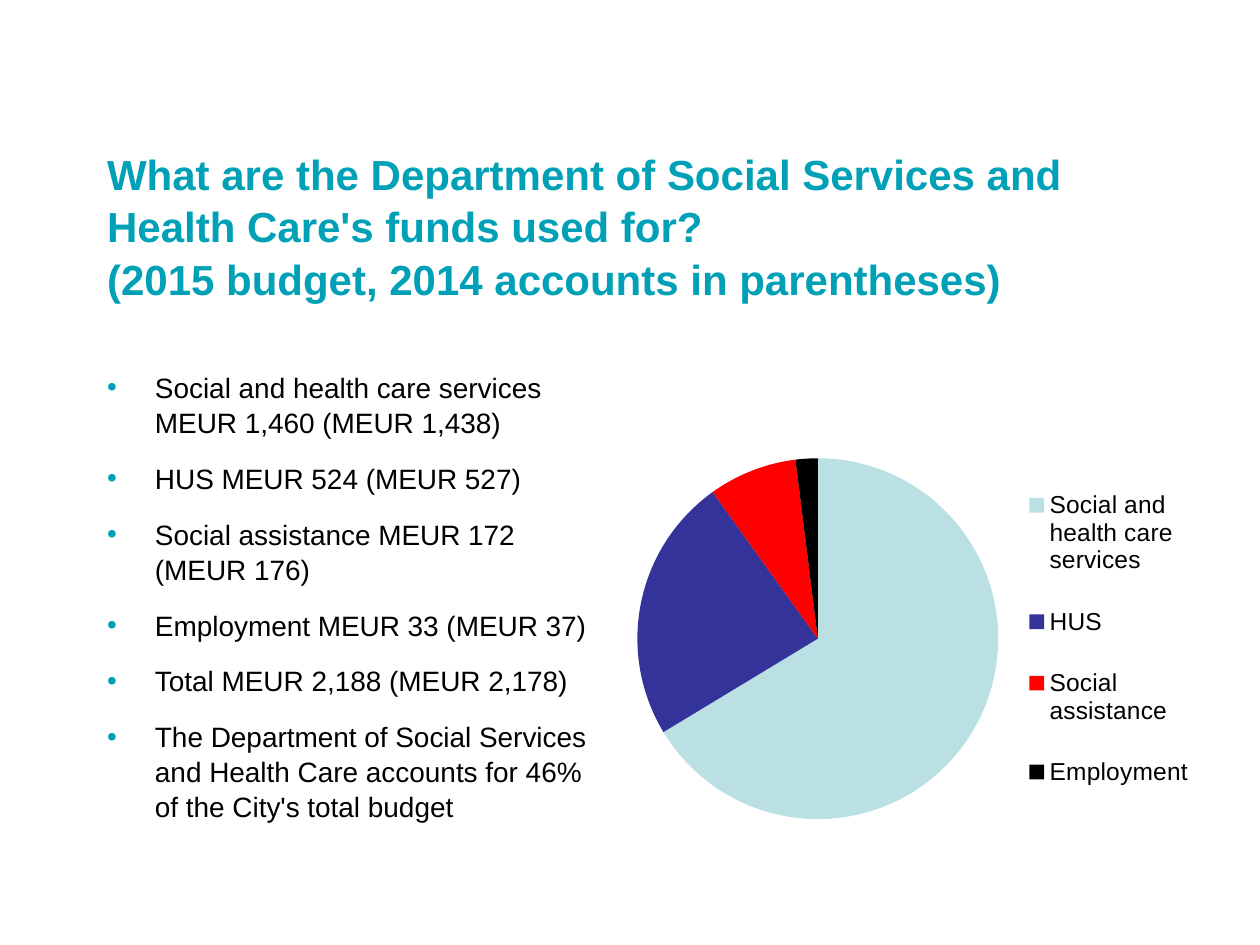
from dataclasses import dataclass

from lxml.etree import SubElement
from pptx import Presentation
from pptx.chart.data import CategoryChartData
from pptx.dml.color import RGBColor
from pptx.enum.chart import XL_CHART_TYPE as ChartType, XL_LEGEND_POSITION as LegendPos
from pptx.enum.text import MSO_ANCHOR as Anchor, MSO_AUTO_SIZE as AutoSize, PP_ALIGN as Align
from pptx.oxml import parse_xml
from pptx.oxml.ns import nsdecls, qn
from pptx.util import Inches, Pt


@dataclass(frozen=True)
class Theme:
    font: str = "Arial"
    accent: str = "00A0B6"
    text: str = "000000"
    title_size: int = 24
    body_size: int = 16
    legend_size: int = 14
    line_spacing: float = 1.04


@dataclass(frozen=True)
class Box:
    left: float
    top: float
    width: float
    height: float


@dataclass(frozen=True)
class Share:
    category: str
    percent: int
    color: str


THEME = Theme()
TITLE = ("What are the Department of Social Services and Health Care's funds used for?"
         "\v(2015 budget, 2014 accounts in parentheses)")
POINTS = [
    "Social and health care services MEUR 1,460 (MEUR 1,438)",
    "HUS MEUR 524 (MEUR 527)",
    "Social assistance MEUR 172 (MEUR 176)",
    "Employment MEUR 33 (MEUR 37)",
    "Total MEUR 2,188 (MEUR 2,178)",
    "The Department of Social Services and Health Care accounts for 46% of the City's total budget",
]
SHARES = [
    Share("Social and health care services", 67, "BBE0E3"),
    Share("HUS", 24, "333399"),
    Share("Social assistance", 8, "FF0000"),
    Share("Employment", 2, "000000"),
]


def style_font(font, size: int, color: str, bold: bool = False) -> None:
    font.name = THEME.font
    font.size = Pt(size)
    font.bold = bold
    font.color.rgb = RGBColor.from_string(color)


def place(placeholder, box: Box, anchor: Anchor) -> None:
    placeholder.left, placeholder.top = Inches(box.left), Inches(box.top)
    placeholder.width, placeholder.height = Inches(box.width), Inches(box.height)
    frame = placeholder.text_frame
    frame.word_wrap = True
    frame.auto_size = AutoSize.NONE
    frame.vertical_anchor = anchor


def add_bullet(paragraph, indent: float) -> None:
    properties = paragraph._p.get_or_add_pPr()
    properties.set("marL", str(Inches(indent)))
    properties.set("indent", str(-Inches(indent)))
    color = SubElement(properties, qn("a:buClr"))
    SubElement(color, qn("a:srgbClr")).set("val", THEME.accent)
    SubElement(properties, qn("a:buFont")).set("typeface", THEME.font)
    SubElement(properties, qn("a:buChar")).set("char", "•")


def set_layout(element, index: int, area: Box, inner: bool = False) -> None:
    """Fix a chart part at fractions of the chart's size."""
    for old in element.findall(qn("c:layout")):
        element.remove(old)
    target = '<c:layoutTarget val="inner"/>' if inner else ""
    values = (("xMode", "edge"), ("yMode", "edge"), ("x", area.left), ("y", area.top),
              ("w", area.width), ("h", area.height))
    parts = "".join(f'<c:{tag} val="{value}"/>' for tag, value in values)
    element.insert(index, parse_xml(
        f'<c:layout {nsdecls("c")}><c:manualLayout>{target}{parts}</c:manualLayout></c:layout>'))


def fill_title(title) -> None:
    place(title, Box(0.75, 1.16, 7.95, 1.25), Anchor.MIDDLE)
    title.text_frame.text = TITLE
    heading = title.text_frame.paragraphs[0]
    heading.alignment = Align.LEFT
    heading.line_spacing = THEME.line_spacing
    for run in heading.runs:
        style_font(run.font, THEME.title_size, THEME.accent, bold=True)


def fill_points(body) -> None:
    place(body, Box(0.75, 2.88, 4.09, 4.25), Anchor.TOP)
    body.text_frame.text = "\n".join(POINTS)
    for point in body.text_frame.paragraphs:
        add_bullet(point, 0.38)
        point.line_spacing = THEME.line_spacing
        point.space_before = Pt(0)
        point.space_after = Pt(12)
        for run in point.runs:
            style_font(run.font, THEME.body_size, THEME.text)


def add_budget_pie(slide, box: Box) -> None:
    budget = CategoryChartData()
    budget.categories = [share.category for share in SHARES]
    budget.add_series("Series 1", [share.percent for share in SHARES])
    chart = slide.shapes.add_chart(
        ChartType.PIE, Inches(box.left), Inches(box.top),
        Inches(box.width), Inches(box.height), budget).chart
    chart.has_title = False
    style_font(chart.font, 18, THEME.text)

    # Slices
    pie = chart.plots[0]
    pie.vary_by_categories = True
    for index, share in enumerate(SHARES):
        fill = pie.series[0].points[index].format.fill
        fill.solid()
        fill.fore_color.rgb = RGBColor.from_string(share.color)
    set_layout(pie._element.getparent(), 0, Box(0.03, 0.08, 0.62, 0.84), inner=True)

    # Legend
    chart.has_legend = True
    legend = chart.legend
    legend.position = LegendPos.RIGHT
    legend.include_in_layout = False
    style_font(legend.font, THEME.legend_size, THEME.text)
    set_layout(legend._element, 1, Box(0.69, 0.08, 0.3, 0.84))


def main() -> None:
    deck = Presentation()
    deck.slide_width, deck.slide_height = Inches(10), Inches(7.5)
    slide = deck.slides.add_slide(deck.slide_layouts[1])
    fill_title(slide.shapes.title)
    fill_points(slide.placeholders[1])
    add_budget_pie(slide, Box(4.92, 3.36, 4.62, 3.42))
    deck.save("out.pptx")


if __name__ == "__main__":
    main()
